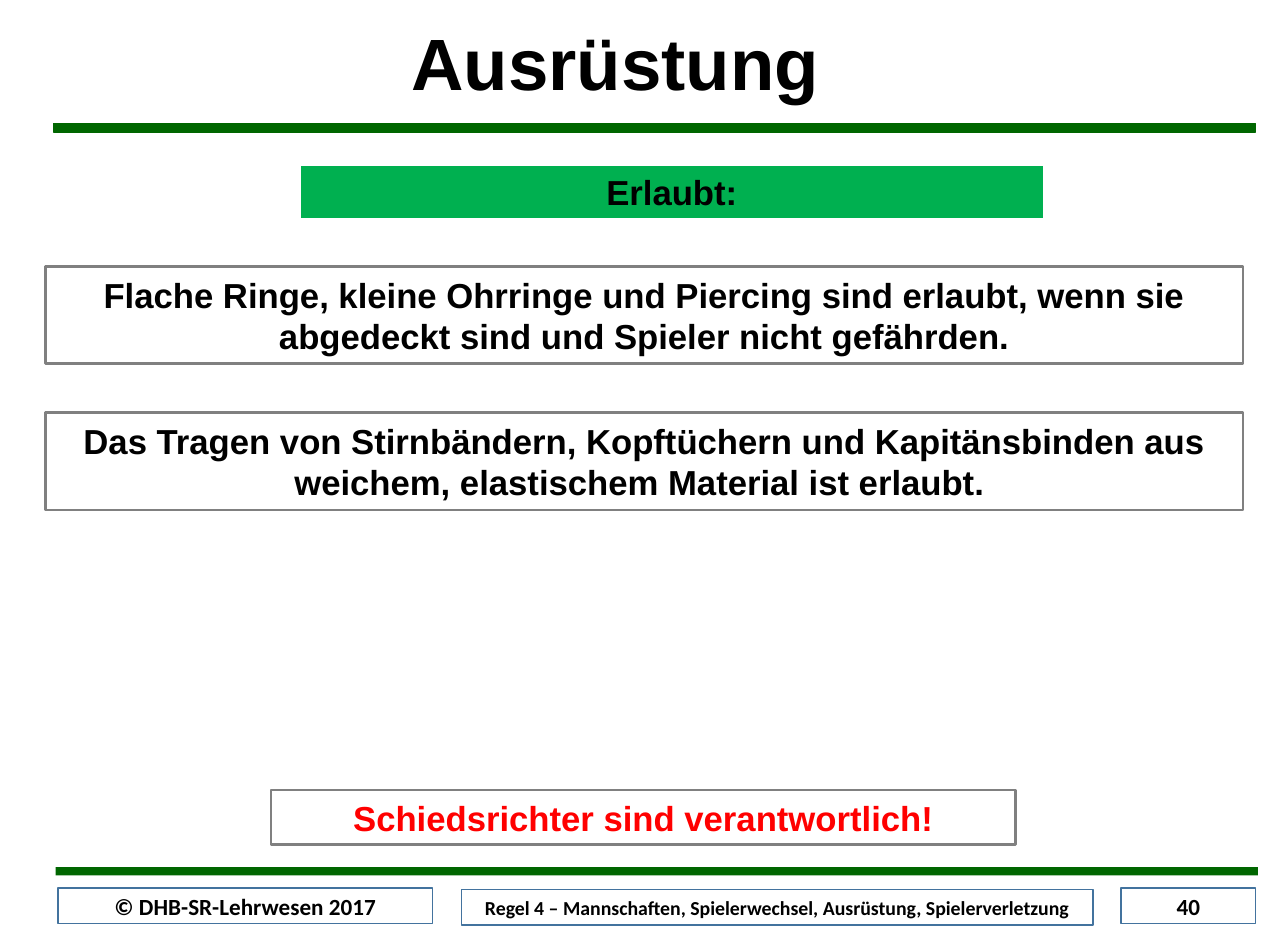
"""Build the slide on permitted equipment."""
import pptx
import pptx.util
import pptx.dml.color
import pptx.enum.shapes
import pptx.enum.text

Cm = pptx.util.Cm
Pt = pptx.util.Pt
RGB = pptx.dml.color.RGBColor.from_string
HUES = {
    "black": "000000", "white": "FFFFFF", "red": "FF0000", "gray": "808080",
    "blue": "43739E", "green": "00B050", "dark": "006600",
}


def put(text, shape, size=21, font="Arial", hue="black",
        anchor=pptx.enum.text.MSO_ANCHOR.MIDDLE, space=1.0):
    frame = shape.text_frame
    frame.word_wrap = True
    frame.auto_size = pptx.enum.text.MSO_AUTO_SIZE.NONE
    frame.vertical_anchor = anchor
    frame.margin_left = frame.margin_right = Cm(0.27)
    frame.margin_top = frame.margin_bottom = Cm(0.13)
    para = frame.paragraphs[0]
    para.alignment = pptx.enum.text.PP_ALIGN.CENTER
    para.line_spacing = space
    run = para.add_run()
    run.text = text
    run.font.name = font
    run.font.size = Pt(size)
    run.font.bold = True
    run.font.color.rgb = RGB(HUES[hue])


def draw(place, fill, line=None, width=1.5):
    shape = slide.shapes.add_shape(
        pptx.enum.shapes.MSO_SHAPE.RECTANGLE, *[Cm(n) for n in place])
    shape.shadow.inherit = False
    shape.fill.solid()
    shape.fill.fore_color.rgb = RGB(HUES[fill])
    if line:
        shape.line.color.rgb = RGB(HUES[line])
        shape.line.width = Pt(width)
    else:
        shape.line.fill.background()
    return shape


deck = pptx.Presentation()
deck.slide_width = Cm(27.51)
deck.slide_height = Cm(20.12)
slide = deck.slides.add_slide(deck.slide_layouts[5])

title = slide.shapes.title
title.left, title.top = Cm(7.57), Cm(0.46)
title.width, title.height = Cm(11.58), Cm(2.11)
put("Ausrüstung ", title, size=44, space=0.9,
    anchor=pptx.enum.text.MSO_ANCHOR.TOP)

draw((1.14, 2.64, 25.68, 0.18), "dark", "dark", 0.75)
draw((1.19, 18.52, 25.68, 0.18), "dark")

feet = [
    ("© DHB-SR-Lehrwesen 2017", 1.24, 18.97, 8, 14),
    ("Regel 4 – Mannschaften, Spielerwechsel, Ausrüstung, Spielerverletzung",
     9.86, 19, 13.49, 12),
    ("40", 23.95, 18.97, 2.87, 14),
]
for text, left, top, wide, size in feet:
    foot = draw((left, top, wide, 0.76), "white", "blue", 1)
    put(text, foot, size=size, font="Calibri")

put("Erlaubt:", draw((6.4, 3.51, 15.9, 1.17), "green", "white"))

rules = [
    "Flache Ringe, kleine Ohrringe und Piercing sind erlaubt, "
    "wenn sie abgedeckt sind und Spieler nicht gefährden.",
    "Das Tragen von Stirnbändern, Kopftüchern und Kapitänsbinden "
    "aus weichem, elastischem Material ist erlaubt. ",
]
for row, text in enumerate(rules):
    put(text, draw((0.97, 5.69 + row * 3.12, 25.58, 2.08), "white", "gray"))

put("Schiedsrichter sind verantwortlich!",
    draw((5.79, 16.87, 15.9, 1.17), "white", "gray"), hue="red")

deck.save("out.pptx")
